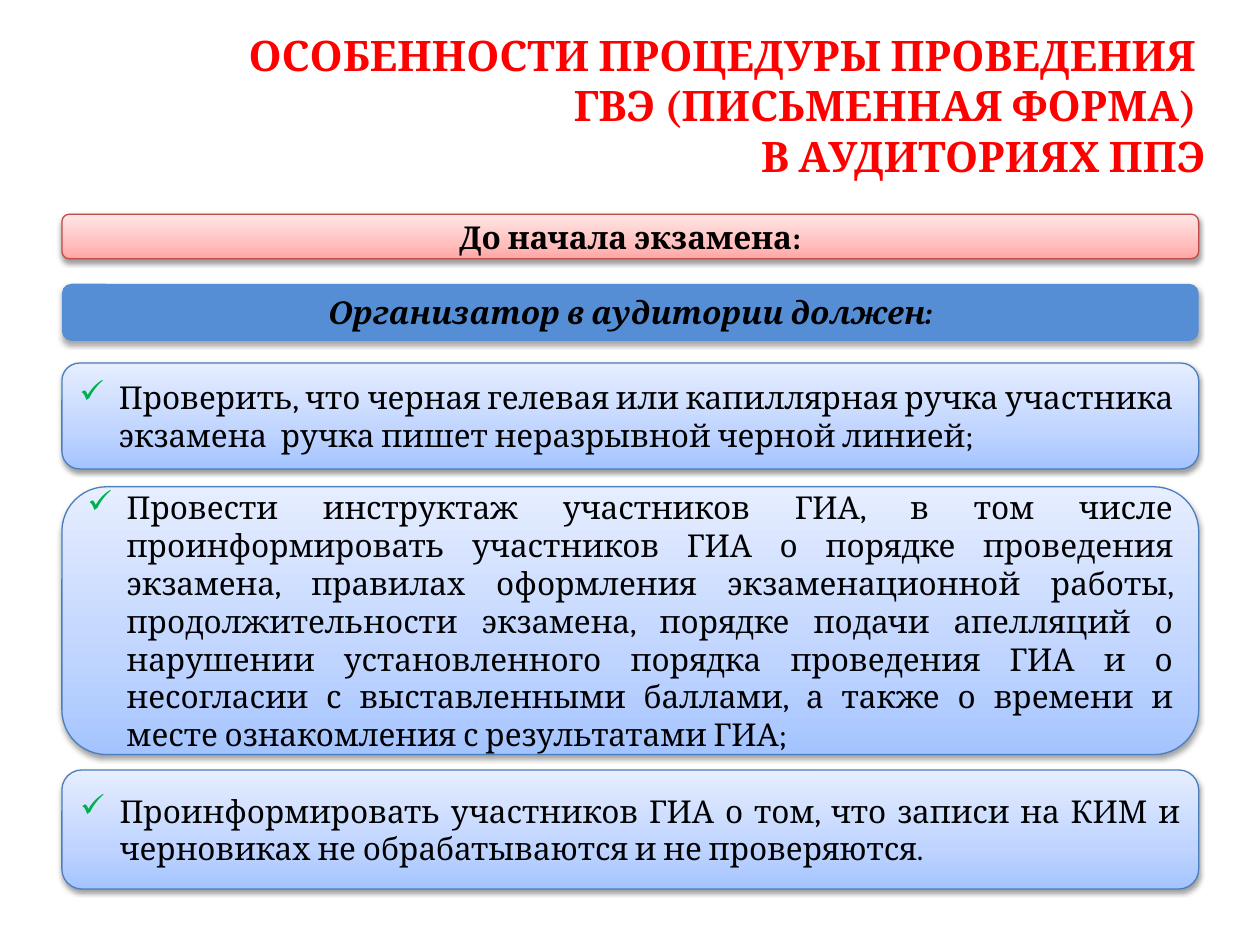
from copy import deepcopy

from lxml import etree
from pptx import Presentation
from pptx import util as u
from pptx.dml.color import RGBColor
from pptx.enum import shapes, text
from pptx.oxml.ns import qn

FONT = "Cambria"
COLORS = {
    "title": "FF0000",
    "text": "000000",
    "check": "00B050",
    "shadow": "000000",
    "pink line": "BF4C48",
    "blue line": "4B7EBC",
    "bar": "558ED5",
}
GRADIENTS = {
    "pink": ("FFA6A5", "FFC0BF", "FFE7E7"),
    "blue": ("A4C4FF", "BFD4FF", "E6EEFF"),
}
STOP_POSITIONS = (0, 0.35, 1)
LEFT, WIDTH = 35.4, 649.6
CHECK_INDENT = 22.5


def add_panel(top, height, gradient=None, alpha=38, distance=1.6):
    """Add a shadowed rounded panel and return its only paragraph."""
    shape = slide.shapes.add_shape(
        shapes.MSO_SHAPE.ROUNDED_RECTANGLE,
        u.Pt(LEFT), u.Pt(top), u.Pt(WIDTH), u.Pt(height))
    if gradient:
        shape.fill.gradient()
        shape.fill.gradient_angle = 90
        first_stop = shape._element.spPr.find(".//" + qn("a:gs"))
        first_stop.addnext(deepcopy(first_stop))
        for stop, position, color in zip(
                shape.fill.gradient_stops, STOP_POSITIONS, GRADIENTS[gradient]):
            stop.position = position
            stop.color.rgb = RGBColor.from_string(color)
        shape.line.color.rgb = RGBColor.from_string(COLORS[gradient + " line"])
        shape.line.width = u.Pt(0.75)
    else:
        shape.fill.solid()
        shape.fill.fore_color.rgb = RGBColor.from_string(COLORS["bar"])
        shape.line.fill.background()

    shape.shadow.inherit = False
    effects = shape._element.spPr.find(qn("a:effectLst"))
    shadow = etree.SubElement(
        effects, qn("a:outerShdw"), blurRad=str(u.Pt(3.1)),
        dist=str(u.Pt(distance)), dir="5400000", rotWithShape="0")
    color = etree.SubElement(shadow, qn("a:srgbClr"), val=COLORS["shadow"])
    etree.SubElement(color, qn("a:alpha"), val=str(alpha * 1000))

    shape.text_frame.word_wrap = True
    shape.text_frame.vertical_anchor = text.MSO_ANCHOR.MIDDLE
    return shape.text_frame.paragraphs[0]


def add_run(paragraph, words, size=18, color="text", bold=False, italic=False):
    run = paragraph.add_run()
    run.text = words
    run.font.name = FONT
    run.font.size = u.Pt(size)
    run.font.bold = bold
    run.font.italic = italic
    run.font.color.rgb = RGBColor.from_string(COLORS[color])


presentation = Presentation()
presentation.slide_width, presentation.slide_height = u.Pt(720), u.Pt(540)
slide = presentation.slides.add_slide(presentation.slide_layouts[6])

# Title
title = slide.shapes.add_textbox(u.Pt(48), u.Pt(15), u.Pt(648), u.Pt(90))
title.text_frame.word_wrap = True
title.text_frame.vertical_anchor = text.MSO_ANCHOR.MIDDLE
paragraph = title.text_frame.paragraphs[0]
paragraph.alignment = text.PP_ALIGN.RIGHT
title_lines = (
    "ОСОБЕННОСТИ ПРОЦЕДУРЫ ПРОВЕДЕНИЯ ",
    "ГВЭ (ПИСЬМЕННАЯ ФОРМА) ",
    "В АУДИТОРИЯХ ППЭ",
)
for index, line in enumerate(title_lines):
    if index:
        paragraph.add_line_break()
    add_run(paragraph, line, size=24, color="title", bold=True)

# Heading bars
paragraph = add_panel(122.4, 25.5, "pink")
paragraph.alignment = text.PP_ALIGN.CENTER
add_run(paragraph, "До начала экзамена:", bold=True)

paragraph = add_panel(162.2, 32.6, alpha=35, distance=1.8)
paragraph.alignment = text.PP_ALIGN.CENTER
add_run(paragraph, "Организатор в аудитории должен:", bold=True, italic=True)

# Duties: top, height, alignment, wording
duties = (
    (207.5, 60.5, text.PP_ALIGN.LEFT,
     "Проверить, что черная гелевая или капиллярная ручка участника "
     "экзамена  ручка пишет неразрывной черной линией;"),
    (278.2, 153, text.PP_ALIGN.JUSTIFY,
     "Провести инструктаж участников ГИА, в том числе проинформировать "
     "участников ГИА о порядке проведения экзамена, правилах оформления "
     "экзаменационной работы, продолжительности экзамена, порядке подачи "
     "апелляций о нарушении установленного порядка проведения ГИА и о "
     "несогласии с выставленными баллами, а также о времени и месте "
     "ознакомления с результатами ГИА;"),
    (440, 68, text.PP_ALIGN.JUSTIFY,
     "Проинформировать участников ГИА о том, что записи на КИМ и "
     "черновиках не обрабатываются и не проверяются."),
)
for top, height, alignment, words in duties:
    paragraph = add_panel(top, height, "blue")
    paragraph.alignment = alignment
    properties = paragraph._p.get_or_add_pPr()
    properties.set("marL", str(u.Pt(CHECK_INDENT)))
    properties.set("indent", str(-u.Pt(CHECK_INDENT)))
    bullet_color = etree.SubElement(properties, qn("a:buClr"))
    etree.SubElement(bullet_color, qn("a:srgbClr"), val=COLORS["check"])
    etree.SubElement(properties, qn("a:buChar"), char="✓")
    add_run(paragraph, words)

presentation.save("out.pptx")
